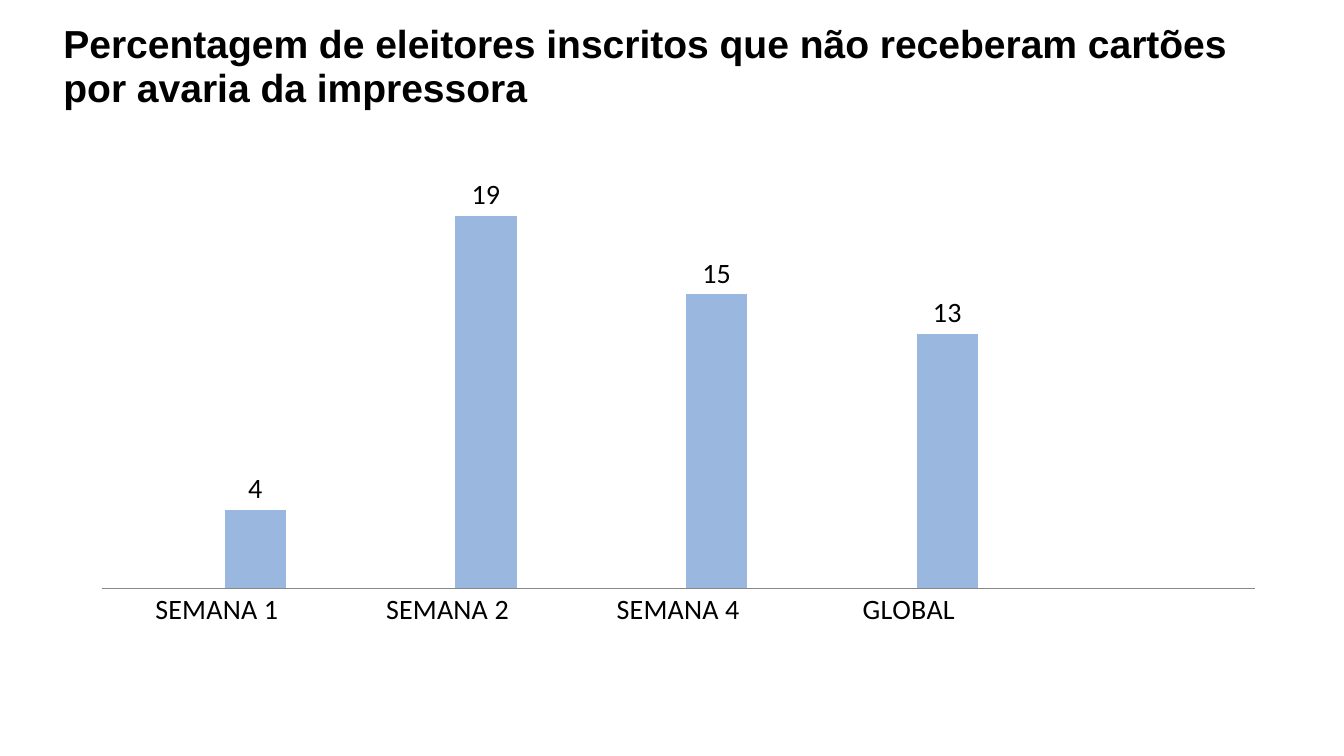
"""Build the slide on the share of voters left without cards by printer failure."""
from dataclasses import dataclass
from typing import Optional

from lxml.etree import SubElement
from pptx import Presentation
from pptx.chart.data import CategoryChartData
from pptx.dml.color import RGBColor
from pptx.enum.chart import XL_CHART_TYPE as ChartType
from pptx.enum.chart import XL_LABEL_POSITION as LabelPosition
from pptx.enum.chart import XL_TICK_MARK as TickMark
from pptx.enum.text import MSO_ANCHOR as Anchor
from pptx.oxml.ns import qn
from pptx.util import Pt

COLORS = {"text": "000000", "bar": "99B7DF", "axis": "898989", "unused": "5B9BD5"}
WEEKS = ("SEMANA 1", "SEMANA 2", "SEMANA 4", "GLOBAL", "")
PLOT_AREA = {"x": 0.02, "y": 0.04, "w": 0.96, "h": 0.86}


@dataclass(frozen=True)
class Box:
    left: float
    top: float
    width: float
    height: float

    def lengths(self) -> tuple:
        return Pt(self.left), Pt(self.top), Pt(self.width), Pt(self.height)


@dataclass(frozen=True)
class Series:
    name: str
    values: tuple[Optional[int], ...]
    color: str


SERIES = (
    Series("Series 1", (None,) * len(WEEKS), "unused"),
    Series("Series 2", (4, 19, 15, 13, None), "bar"),
)


def color(name: str) -> RGBColor:
    return RGBColor.from_string(COLORS[name])


def style_font(font, face: str, size: float, bold: bool = False) -> None:
    font.name, font.size, font.bold = face, Pt(size), bold
    font.color.rgb = color("text")


def add_title(slide, box: Box, wording: str) -> None:
    frame = slide.shapes.add_textbox(*box.lengths()).text_frame
    frame.word_wrap = True
    frame.vertical_anchor = Anchor.TOP
    frame.margin_top = Pt(2.6)
    paragraph = frame.paragraphs[0]
    paragraph.line_spacing = 0.93
    run = paragraph.add_run()
    run.text = wording
    style_font(run.font, "Arial", 27.9, bold=True)


def fix_plot_area(chart) -> None:
    plot_area = chart.plots[0]._element.getparent()
    for old in plot_area.findall(qn("c:layout")):
        plot_area.remove(old)
    layout = SubElement(plot_area, qn("c:layout"))
    plot_area.insert(0, layout)
    manual = SubElement(layout, qn("c:manualLayout"))
    settings = {"layoutTarget": "inner", "xMode": "edge", "yMode": "edge", **PLOT_AREA}
    for tag, value in settings.items():
        SubElement(manual, qn(f"c:{tag}")).set("val", str(value))


def add_failure_chart(slide, box: Box) -> None:
    data = CategoryChartData(number_format="General")
    data.categories = WEEKS
    for series in SERIES:
        data.add_series(series.name, series.values)
    chart = slide.shapes.add_chart(
        ChartType.COLUMN_CLUSTERED, *box.lengths(), data
    ).chart
    chart.has_legend = chart.has_title = False
    style_font(chart.font, "Calibri", 10)

    weeks = chart.category_axis
    weeks.major_tick_mark = weeks.minor_tick_mark = TickMark.NONE
    weeks.format.line.color.rgb = color("axis")
    weeks.format.line.width = Pt(0.75)
    style_font(weeks.tick_labels.font, "Calibri", 20)

    percentages = chart.value_axis
    percentages.minimum_scale, percentages.maximum_scale = 0, 20
    percentages.has_major_gridlines = False
    percentages.visible = False

    columns = chart.plots[0]
    columns.gap_width, columns.overlap = 150, -25
    columns.vary_by_categories = False
    for series, bars in zip(SERIES, columns.series):
        bars.format.fill.solid()
        bars.format.fill.fore_color.rgb = color(series.color)
        bars.invert_if_negative = False
        labels = bars.data_labels
        labels.show_value = True
        labels.position = LabelPosition.OUTSIDE_END
        style_font(labels.font, "Calibri", 20)
    fix_plot_area(chart)


def main() -> None:
    deck = Presentation()
    deck.slide_width, deck.slide_height = Pt(960), Pt(540)
    slide = deck.slides.add_slide(deck.slide_layouts[6])
    add_title(
        slide,
        Box(38.2, 14.4, 893.5, 80),
        "Percentagem de eleitores inscritos que não receberam cartões "
        "por avaria da impressora",
    )
    add_failure_chart(slide, Box(55.4, 126.7, 858.2, 326.2))
    deck.save("out.pptx")


if __name__ == "__main__":
    main()
